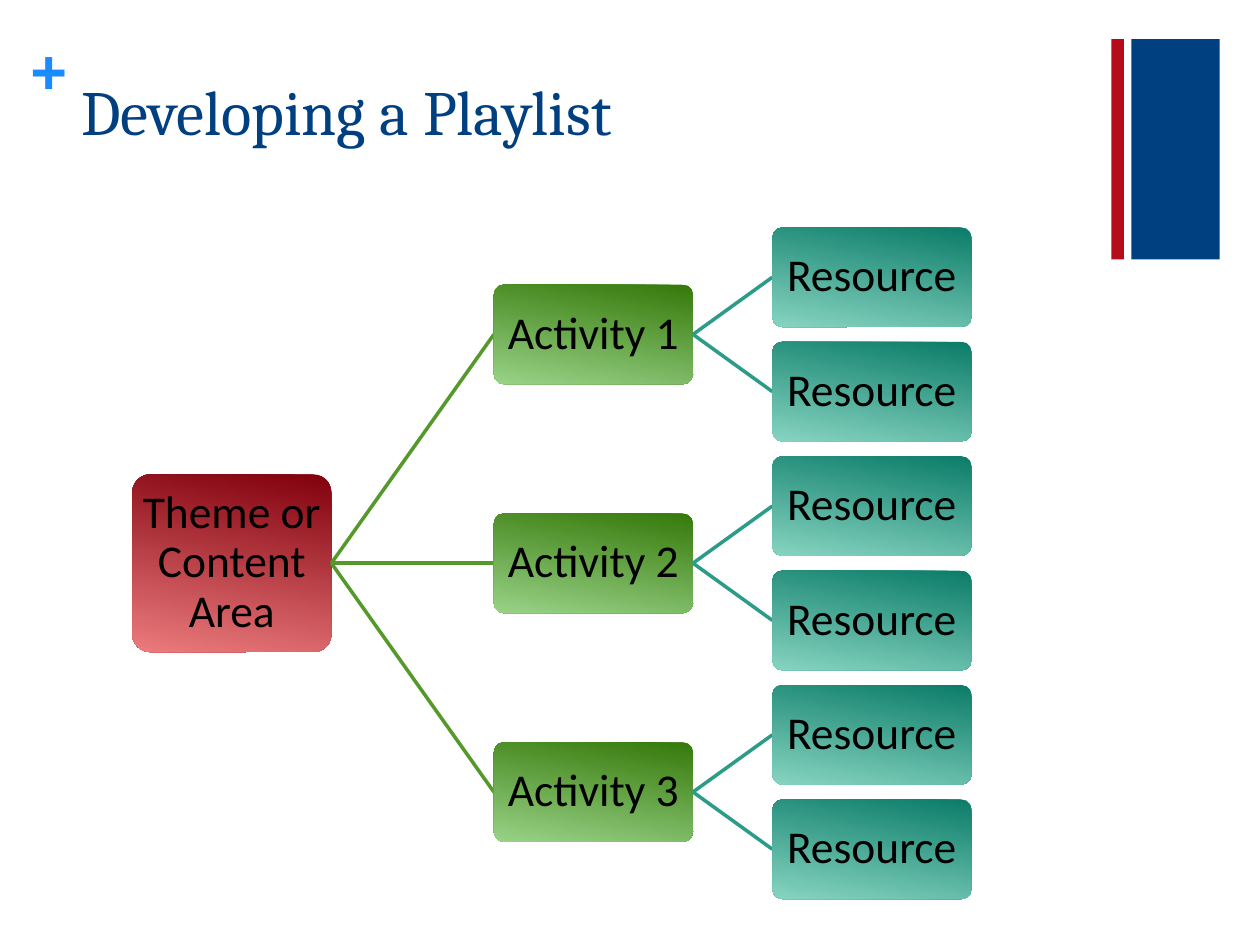
from pptx import Presentation
from pptx.dml.color import RGBColor
from pptx.enum.shapes import MSO_CONNECTOR, MSO_SHAPE
from pptx.enum.text import MSO_ANCHOR, PP_ALIGN
from pptx.oxml.ns import qn
from pptx.util import Inches, Pt

RECTANGLE = MSO_SHAPE.RECTANGLE
ROUNDED = MSO_SHAPE.ROUNDED_RECTANGLE
STRAIGHT = MSO_CONNECTOR.STRAIGHT
TOP, MIDDLE = MSO_ANCHOR.TOP, MSO_ANCHOR.MIDDLE
LEFT, CENTER = PP_ALIGN.LEFT, PP_ALIGN.CENTER

SLIDE_WIDTH, SLIDE_HEIGHT = 10, 7.5
COLUMN_LEFTS = (1.05, 3.92, 6.13)
FIRST_ROW_CENTER = 2.2
ROW_PITCH = 0.908
NODE_WIDTH, NODE_HEIGHT, ROOT_HEIGHT = 1.58, 0.79, 1.41
RESOURCES_PER_ACTIVITY = 2
ACTIVITIES = ("Activity 1", "Activity 2", "Activity 3")

NAVY, RED, BLUE, BLACK = "004080", "B50B1B", "1A8CFF", "000000"
GRADIENTS = (("81000C", "EB7B7D"), ("35790A", "99D287"), ("0B7C68", "86D4C1"))
BRANCH_COLORS = (None, "55992B", "2C9C89")


def color(value):
    return RGBColor.from_string(value)


def write(shape, text, font="Calibri", size=26, fill=BLACK, bold=False,
          align=LEFT, anchor=TOP, insets=(0, 0), spacing=1.0):
    frame = shape.text_frame
    frame.word_wrap = True
    frame.vertical_anchor = anchor
    frame.margin_left = frame.margin_right = Inches(insets[0])
    frame.margin_top = frame.margin_bottom = Inches(insets[1])
    paragraph = frame.paragraphs[0]
    paragraph.alignment = align
    paragraph.line_spacing = spacing
    run = paragraph.add_run()
    run.text = text
    run.font.name = font
    run.font.size = Pt(size)
    run.font.bold = bold
    run.font.color.rgb = color(fill)


class PlaylistSlide:
    def __init__(self, presentation):
        self.shapes = presentation.slides.add_slide(presentation.slide_layouts[6]).shapes

    def row_center(self, row):
        return FIRST_ROW_CENTER + row * ROW_PITCH

    def shape(self, kind, left, top, width, height):
        shape = self.shapes.add_shape(
            kind, Inches(left), Inches(top), Inches(width), Inches(height))
        shape.shadow.inherit = False
        shape.line.fill.background()
        return shape

    def bar(self, left, width, fill):
        bar = self.shape(RECTANGLE, left, 0.31, width, 1.75)
        bar.fill.solid()
        bar.fill.fore_color.rgb = color(fill)

    def label(self, text, left, top, width, height, **text_format):
        box = self.shapes.add_textbox(
            Inches(left), Inches(top), Inches(width), Inches(height))
        write(box, text, **text_format)

    def node(self, text, column, row, height=NODE_HEIGHT):
        top = self.row_center(row) - height / 2
        node = self.shape(ROUNDED, COLUMN_LEFTS[column], top, NODE_WIDTH, height)
        node.adjustments[0] = 0.1
        node.fill.gradient()
        node.fill.gradient_angle = 260
        for stop, value in zip(node.fill.gradient_stops, GRADIENTS[column]):
            stop.color.rgb = color(value)
        write(node, text, align=CENTER, anchor=MIDDLE, insets=(0.02, 0.02), spacing=0.9)

    def branch(self, column, parent_row, row):
        connector = self.shapes.add_connector(
            STRAIGHT,
            Inches(COLUMN_LEFTS[column - 1] + NODE_WIDTH), Inches(self.row_center(parent_row)),
            Inches(COLUMN_LEFTS[column]), Inches(self.row_center(row)))
        connector.line.color.rgb = color(BRANCH_COLORS[column])
        connector.line.width = Pt(2)
        properties = connector._element.spPr
        properties.append(properties.makeelement(qn("a:effectLst"), {}))


def main():
    presentation = Presentation()
    presentation.slide_width = Inches(SLIDE_WIDTH)
    presentation.slide_height = Inches(SLIDE_HEIGHT)
    slide = PlaylistSlide(presentation)

    slide.bar(8.98, 0.7, NAVY)
    slide.label("+", 0.24, 0.25, 0.29, 0.61, font="Arial", size=36, fill=BLUE, bold=True)
    slide.bar(8.82, 0.1, RED)

    root_row = (len(ACTIVITIES) * RESOURCES_PER_ACTIVITY - 1) / 2
    slide.node("Theme or Content Area", 0, root_row, ROOT_HEIGHT)
    for index, activity in enumerate(ACTIVITIES):
        first_row = index * RESOURCES_PER_ACTIVITY
        activity_row = first_row + (RESOURCES_PER_ACTIVITY - 1) / 2
        slide.branch(1, root_row, activity_row)
        slide.node(activity, 1, activity_row)
        for row in range(first_row, first_row + RESOURCES_PER_ACTIVITY):
            slide.branch(2, activity_row, row)
            slide.node("Resource", 2, row)

    slide.label("Developing a Playlist", 0.55, 0.53, 8.26, 1.22,
                font="Cambria", size=36, fill=NAVY, insets=(0.1, 0.05))
    presentation.save("out.pptx")


if __name__ == "__main__":
    main()
